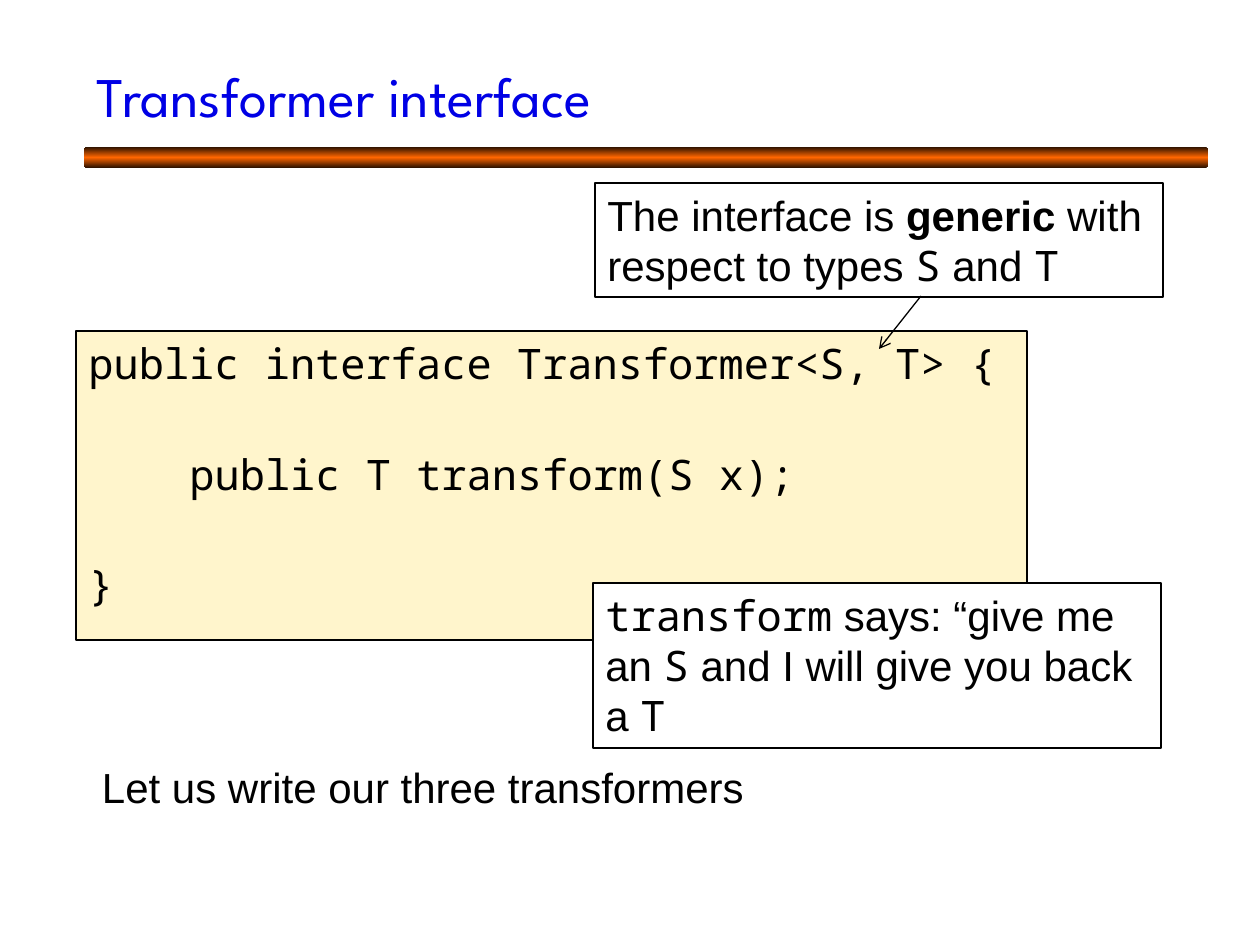
from copy import deepcopy

from lxml import etree
from pptx import Presentation
from pptx.dml.color import RGBColor
from pptx.enum.shapes import MSO_CONNECTOR, MSO_SHAPE
from pptx.enum.text import MSO_ANCHOR, PP_ALIGN
from pptx.oxml.ns import qn
from pptx.util import Emu, Pt

RECTANGLE, ROUNDED = MSO_SHAPE.RECTANGLE, MSO_SHAPE.ROUNDED_RECTANGLE
STRAIGHT = MSO_CONNECTOR.STRAIGHT
TOP, MIDDLE = MSO_ANCHOR.TOP, MSO_ANCHOR.MIDDLE
LEFT, CENTER = PP_ALIGN.LEFT, PP_ALIGN.CENTER
PX_PER_INCH = 126

THEME = {
    "title": "0000E5", "ink": "000000", "paper": "FFFFFF", "code": "FFF5CC",
    "rule_edge": "2A1100", "rule_middle": "FF6600",
    "title_font": "League Spartan", "body_font": "Arial", "code_font": "Noto Sans Mono",
    "title_size": 32, "body_size": 24, "code_gap": 34.5, "line": 0.75,
}

TITLE = ("Transformer interface", (84, 32, 1124, 126))
RULE_BOX = (84, 147, 1124, 21)
CODE_BOX = (76, 331, 951, 309)
CODE_INDENT = 101
CODE_LINES = [
    (0, "public interface Transformer<S, T> {"),
    (1, "public T transform(S x);"),
    (0, "}"),
]
CLOSING = ("Let us write our three transformers", (21, 755, 804, 63))
CALLOUTS = [
    ((595, 183, 568, 114), [
        ("The interface is ", ""), ("generic", "bold"), (" with respect to types ", ""),
        ("S", "code"), (" and ", ""), ("T", "code"),
    ]),
    ((593, 583, 568, 165), [
        ("transform", "code"), (" says: “give me an ", ""), ("S", "code"),
        (" and I will give you back a ", ""), ("T", "code"),
    ]),
]
POINTER = (921, 296, 879, 349)


def px(*lengths):
    return [Emu(round(length * 914400 / PX_PER_INCH)) for length in lengths]


def color(name):
    return RGBColor.from_string(THEME[name])


def set_font(font, face="body_font", size="body_size", ink="ink"):
    font.name = THEME[face]
    font.size = Pt(THEME[size])
    font.color.rgb = color(ink)


def prepare_frame(frame, anchor=TOP):
    frame.word_wrap = True
    frame.vertical_anchor = anchor
    return frame


def add_label(slide, text, box, anchor, align, **style):
    frame = prepare_frame(slide.shapes.add_textbox(*px(*box)).text_frame, anchor)
    paragraph = frame.paragraphs[0]
    paragraph.text = text
    paragraph.alignment = align
    set_font(paragraph.font, **style)


def add_panel(slide, box, fill):
    panel = slide.shapes.add_shape(RECTANGLE, *px(*box))
    panel.shadow.inherit = False
    panel.fill.solid()
    panel.fill.fore_color.rgb = color(fill)
    panel.line.color.rgb = color("ink")
    panel.line.width = Pt(THEME["line"])
    return prepare_frame(panel.text_frame)


def add_rule(slide):
    rule = slide.shapes.add_shape(ROUNDED, *px(*RULE_BOX))
    rule.shadow.inherit = False
    rule.adjustments[0] = 0.17
    rule.line.fill.background()
    rule.fill.gradient()
    rule.fill.gradient_angle = 90
    for stop in rule.fill.gradient_stops:
        stop.color.rgb = color("rule_edge")
    first = rule._element.spPr.find(".//" + qn("a:gs"))
    middle = deepcopy(first)
    middle.set("pos", "50000")
    middle.find(qn("a:srgbClr")).set("val", THEME["rule_middle"])
    first.addnext(middle)


def add_code(slide):
    frame = add_panel(slide, CODE_BOX, "code")
    for index, (level, text) in enumerate(CODE_LINES):
        paragraph = frame.add_paragraph() if index else frame.paragraphs[0]
        paragraph.text = text
        paragraph.alignment = LEFT
        paragraph.space_before = Pt(THEME["code_gap"] if index else 0)
        indent, = px(level * CODE_INDENT)
        paragraph._p.get_or_add_pPr().set("marL", str(indent))
        set_font(paragraph.font, "code_font")


def add_callout(slide, box, words):
    paragraph = add_panel(slide, box, "paper").paragraphs[0]
    paragraph.alignment = LEFT
    for text, style in words:
        run = paragraph.add_run()
        run.text = text
        run.font.bold = style == "bold"
        set_font(run.font, "code_font" if style == "code" else "body_font")


def add_pointer(slide):
    pointer = slide.shapes.add_connector(STRAIGHT, *px(*POINTER))
    pointer.line.color.rgb = color("ink")
    pointer.line.width = Pt(THEME["line"])
    etree.SubElement(pointer.line._get_or_add_ln(), qn("a:tailEnd"), type="arrow")
    etree.SubElement(pointer._element.spPr, qn("a:effectLst"))


def main():
    deck = Presentation()
    deck.slide_width, deck.slide_height = px(1260, 945)
    slide = deck.slides.add_slide(deck.slide_layouts[6])
    add_rule(slide)
    add_label(slide, *TITLE, MIDDLE, LEFT, face="title_font", size="title_size", ink="title")
    add_code(slide)
    add_label(slide, *CLOSING, TOP, CENTER)
    generic_callout, transform_callout = CALLOUTS
    add_callout(slide, *generic_callout)
    add_pointer(slide)
    add_callout(slide, *transform_callout)
    deck.save("out.pptx")


if __name__ == "__main__":
    main()
